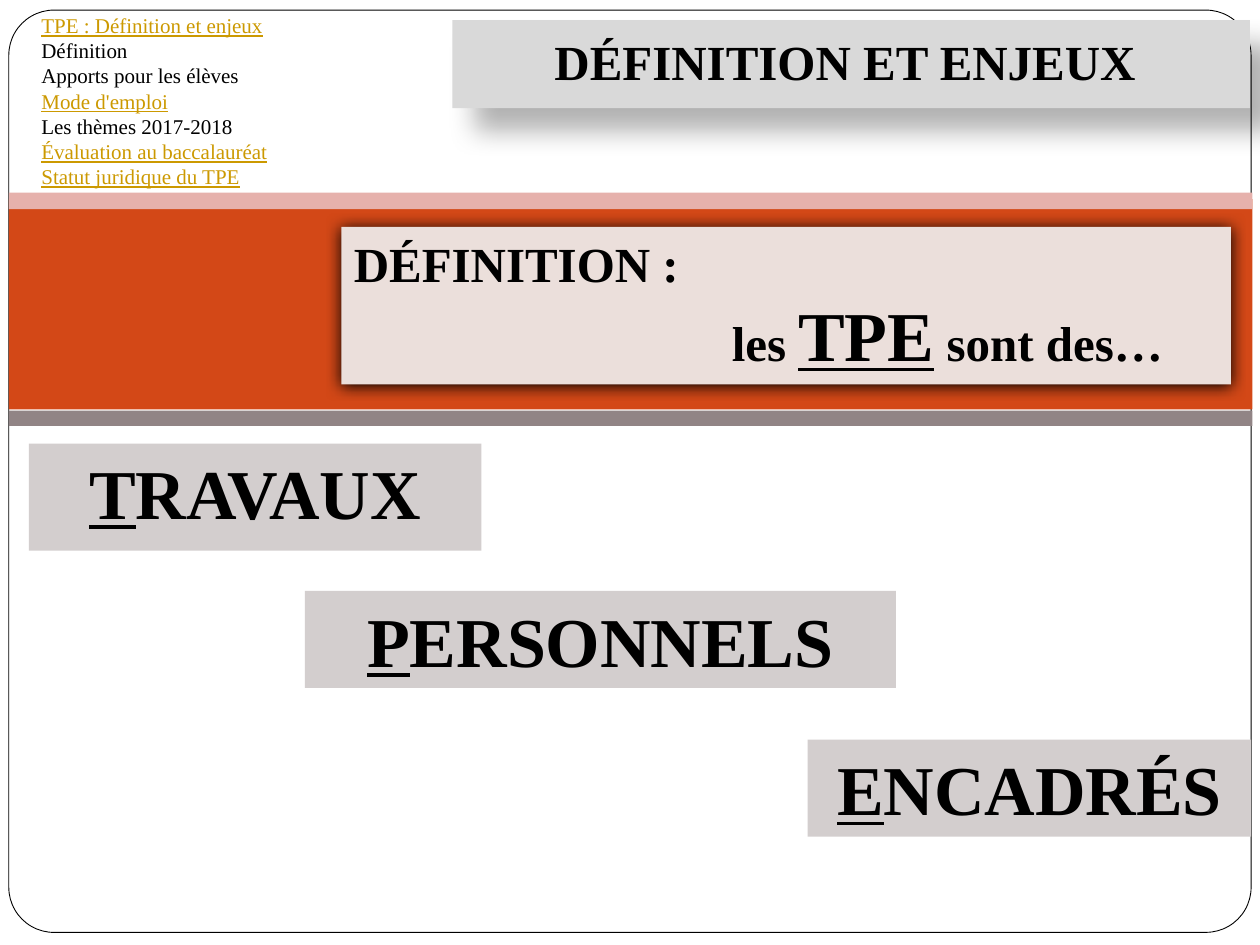
import pptx
import pptx.util
import pptx.dml.color
import pptx.enum.shapes
import pptx.enum.text
import lxml.etree

Inches, Pt = pptx.util.Inches, pptx.util.Pt
Kind = pptx.enum.shapes.MSO_SHAPE
Align = pptx.enum.text.PP_ALIGN
Anchor = pptx.enum.text.MSO_ANCHOR
FONT, BLACK, GOLD = "Times New Roman", "000000", "CC9900"

# Content: menu entries with their link look
MENU = [
    ("TPE : Définition et enjeux", True),
    ("Définition", False),
    ("Apports pour les élèves", False),
    ("Mode d'emploi", True),
    ("Les thèmes 2017-2018", False),
    ("Évaluation au baccalauréat", True),
    ("Statut juridique du TPE", True),
]
TITLE = "DÉFINITION ET ENJEUX "
HEAD = "DÉFINITION :"
LEAD = [("les ", 28, False), ("TPE", 40, True), (" sont des…", 28, False)]

# Words: text, box, space before
WORDS = [
    ("TRAVAUX", (0.23, 3.52, 3.59, 0.85), 5.8),
    ("PERSONNELS", (2.42, 4.69, 4.69, 0.77), 0),
    ("ENCADRÉS", (6.41, 5.87, 3.52, 0.77), 0),
]
BANDS = [
    ((0.07, 1.58, 9.87, 1.67), "D34817"),
    ((0.07, 1.53, 9.87, 0.13), "E6B1AC"),
    ((0.07, 3.26, 9.87, 0.12), "918485"),
]

deck = pptx.Presentation()
deck.slide_width, deck.slide_height = Inches(10), Inches(7.5)
slide = deck.slides.add_slide(deck.slide_layouts[6])


def color(code):
    return pptx.dml.color.RGBColor.from_string(code)


def box(at, fill, kind=Kind.RECTANGLE):
    shape = slide.shapes.add_shape(kind, *map(Inches, at))
    shape.shadow.inherit = False
    shape.fill.solid()
    shape.fill.fore_color.rgb = color(fill)
    shape.line.fill.background()
    frame = shape.text_frame
    frame.word_wrap = True
    frame.vertical_anchor = Anchor.TOP
    return shape


def write(para, runs, bold=True, align=Align.LEFT):
    """Fill a paragraph with (text, size, underline, colour) runs."""
    para.alignment = align
    for text, size, under, code in runs:
        run = para.add_run()
        run.text = text
        font = run.font
        font.name, font.size = FONT, Pt(size)
        font.bold, font.underline = bold, under
        font.color.rgb = color(code)


def shade(shape, alpha, blur, dist, angle):
    """Add an outer shadow: percent, points, points, degrees."""
    ns = "{http://schemas.openxmlformats.org/drawingml/2006/main}"
    glow = lxml.etree.SubElement(
        shape.element.spPr.find(ns + "effectLst"), ns + "outerShdw",
        blurRad=str(Pt(blur)), dist=str(Pt(dist)), dir=str(angle * 60000),
        algn="tl", rotWithShape="0")
    tint = lxml.etree.SubElement(glow, ns + "srgbClr", val=BLACK)
    lxml.etree.SubElement(tint, ns + "alpha", val=str(alpha * 1000))


# Rounded frame and colour bands
frame = box((0.07, 0.08, 9.86, 7.32), "FFFFFF", Kind.ROUNDED_RECTANGLE)
frame.adjustments[0] = 0.049
frame.line.color.rgb = color(BLACK)
frame.line.width = Pt(0.5)
for at, fill in BANDS:
    box(at, fill)

# Title
title = box((3.59, 0.16, 6.33, 0.7), "D9D9D9")
shade(title, 30, 15, 18, 45)
title.text_frame.vertical_anchor = Anchor.MIDDLE
title.text_frame.margin_bottom = Inches(0.1)
write(title.text_frame.paragraphs[0], [(TITLE, 28, False, BLACK)],
      align=Align.CENTER)

# Three words with underlined initials
for word, at, gap in WORDS:
    para = box(at, "D3CECE").text_frame.paragraphs[0]
    para.space_before = Pt(gap)
    write(para, [(word[0], 40, True, BLACK), (word[1:], 40, False, BLACK)],
          align=Align.CENTER)

# Menu
menu = slide.shapes.add_textbox(*map(Inches, (0.23, 0.05, 2.11, 1.51)))
menu.text_frame.word_wrap = True
for i, (text, link) in enumerate(MENU):
    para = (menu.text_frame.add_paragraph() if i
            else menu.text_frame.paragraphs[0])
    write(para, [(text, 12, link, GOLD if link else BLACK)], bold=False)

# Definition panel, second line indented
panel = box((2.71, 1.8, 7.06, 1.25), "EBDFDB")
shade(panel, 100, 8.5, 1, 90)
write(panel.text_frame.paragraphs[0], [(HEAD, 28, False, BLACK)])
lead = panel.text_frame.add_paragraph()
write(lead, [(*part, BLACK) for part in LEAD])
lead._p.get_or_add_pPr().set("marL", str(Inches(3)))

deck.save("out.pptx")
